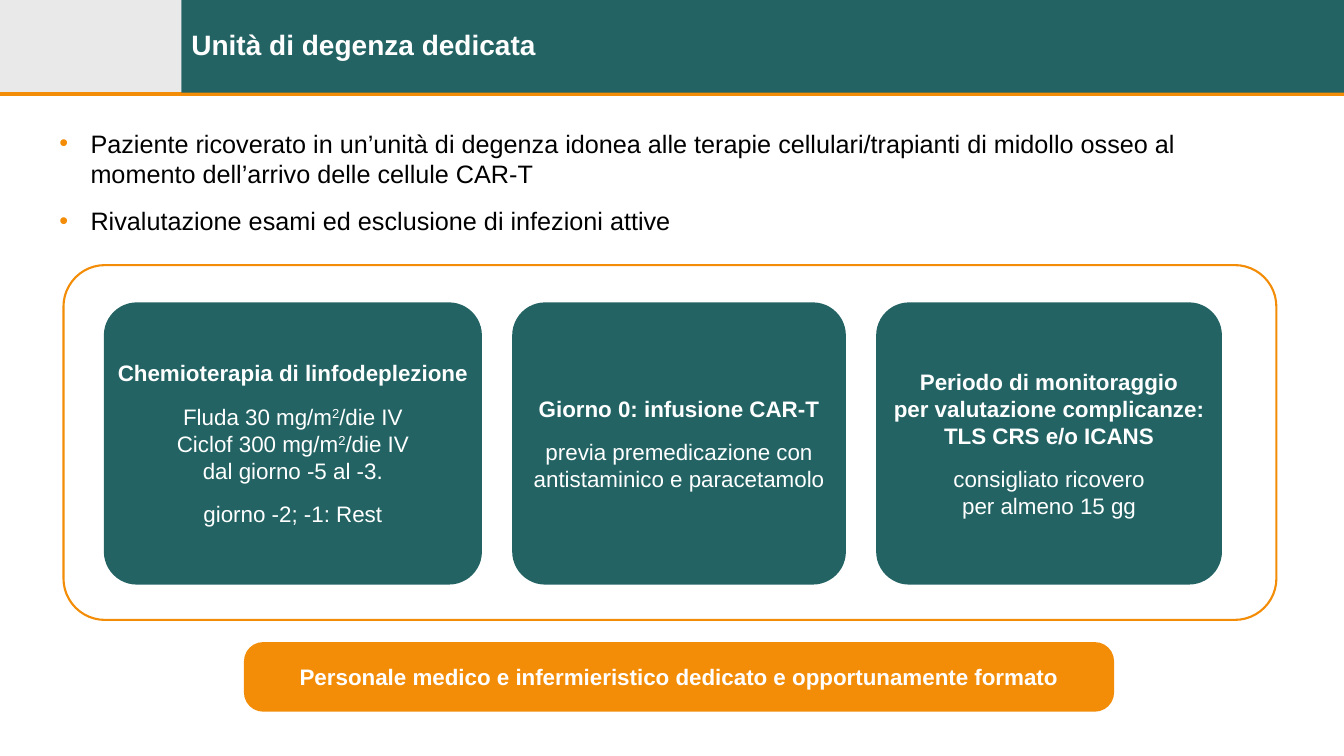
from dataclasses import dataclass
from lxml import etree
from pptx import Presentation
from pptx.dml.color import RGBColor
from pptx.enum.shapes import MSO_CONNECTOR, MSO_SHAPE
from pptx.enum.text import MSO_ANCHOR, PP_ALIGN
from pptx.oxml.ns import qn
from pptx.util import Inches, Pt

RECT, ROUND = MSO_SHAPE.RECTANGLE, MSO_SHAPE.ROUNDED_RECTANGLE
STRAIGHT = MSO_CONNECTOR.STRAIGHT
MIDDLE, TOP = MSO_ANCHOR.MIDDLE, MSO_ANCHOR.TOP
CENTER, LEFT = PP_ALIGN.CENTER, PP_ALIGN.LEFT


@dataclass(frozen=True)
class Theme:
    font: str = "Arial"
    teal: str = "236364"
    orange: str = "F38D08"
    gray: str = "E9E9E9"
    white: str = "FFFFFF"
    black: str = "000000"
    title: int = 20
    body: int = 18
    card: int = 16
    gap: int = 12


THEME = Theme()
WIDTH, HEIGHT = 13.33, 7.5

POINTS = [
    "Paziente ricoverato in un’unità di degenza idonea alle terapie "
    "cellulari/trapianti di midollo osseo al momento dell’arrivo delle cellule CAR-T",
    "Rivalutazione esami ed esclusione di infezioni attive",
]
# Card width, heading, then blocks of lines; ^ raises the next character.
CARDS = [
    (3.75, "Chemioterapia di linfodeplezione",
     [["Fluda 30 mg/m^2/die IV", "Ciclof 300 mg/m^2/die IV", "dal giorno -5 al -3."],
      ["giorno -2; -1: Rest"]]),
    (3.31, "Giorno 0: infusione CAR-T",
     [["previa premedicazione con antistaminico e paracetamolo"]]),
    (3.43, "Periodo di monitoraggio\vper valutazione complicanze: TLS CRS e/o ICANS",
     [["consigliato ricovero\vper almeno 15 gg"]]),
]


def color(code):
    return RGBColor.from_string(code)


def block(slide, box, kind, fill=None, line=None, radius=None):
    shape = slide.shapes.add_shape(kind, *map(Inches, box))
    shape.shadow.inherit = False
    if radius is not None:
        shape.adjustments[0] = radius
    if fill:
        shape.fill.solid()
        shape.fill.fore_color.rgb = color(fill)
    else:
        shape.fill.background()
    if line:
        shape.line.color.rgb = color(line)
        shape.line.width = Pt(1.5)
    else:
        shape.line.fill.background()
    return shape


def frame(shape, anchor, side=0.1):
    text = shape.text_frame
    text.word_wrap = True
    text.vertical_anchor = anchor
    text.margin_left = text.margin_right = Inches(side)
    text.margin_top = text.margin_bottom = Inches(0.05)
    return text


def write(para, words, size, ink, bold=False, align=LEFT, before=0):
    head, *tail = words.split("^")
    para.text = head
    for part in tail:
        power = para.add_run()
        power.text = part[0]
        power.font._element.set("baseline", "30000")
        para.add_run().text = part[1:]
    para.alignment = align
    para.space_before = Pt(before)
    for run in para.runs:
        font = run.font
        font.name, font.size, font.bold = THEME.font, Pt(size), bold
        font.color.rgb = color(ink)


def bullet(para):
    props = para._p.get_or_add_pPr()
    props.set("marL", str(Inches(0.31)))
    props.set("indent", str(-Inches(0.31)))
    tint = etree.SubElement(props, qn("a:buClr"))
    etree.SubElement(tint, qn("a:srgbClr"), val=THEME.orange)
    etree.SubElement(props, qn("a:buFont"), typeface=THEME.font)
    etree.SubElement(props, qn("a:buChar"), char="•")


def header(slide, box, title):
    left, top, width, height = box
    side = 1.8
    block(slide, (left, top, side, height), RECT, THEME.gray)
    rule = slide.shapes.add_connector(
        STRAIGHT, *map(Inches, (left, top + height + 0.01, left + width, top + height + 0.01)))
    rule.line.color.rgb = color(THEME.orange)
    rule.line.width = Pt(3)
    etree.SubElement(rule._element.spPr, qn("a:effectLst"))
    band = block(slide, (left + side, top, width - side, height), RECT, THEME.teal)
    para = frame(band, MIDDLE).paragraphs[0]
    write(para, title, THEME.title, THEME.white, bold=True)
    para.line_spacing = 0.9


def points(slide, box, items):
    text = frame(slide.shapes.add_textbox(*map(Inches, box)), TOP)
    for i, item in enumerate(items):
        para = text.add_paragraph() if i else text.paragraphs[0]
        bullet(para)
        write(para, item, THEME.body, THEME.black, before=THEME.gap if i else 0)


def card(slide, box, head, groups):
    text = frame(block(slide, box, ROUND, THEME.teal, radius=0.117), MIDDLE, side=0)
    write(text.paragraphs[0], head, THEME.card, THEME.white, True, CENTER)
    for group in groups:
        for i, line in enumerate(group):
            write(text.add_paragraph(), line, THEME.card, THEME.white,
                  align=CENTER, before=0 if i else THEME.gap)


def panel(slide, box, cards):
    left, top, width, height = box
    x, y, gap = left + 0.4, top + 0.37, 0.3
    for wide, head, groups in cards:
        card(slide, (x, y, wide, 2.8), head, groups)
        x += wide + gap
    block(slide, box, ROUND, line=THEME.orange, radius=0.117)


def banner(slide, box, words):
    text = frame(block(slide, box, ROUND, THEME.orange, radius=0.276), MIDDLE, side=0)
    write(text.paragraphs[0], words, THEME.card, THEME.white, True, CENTER)


def main():
    deck = Presentation()
    deck.slide_width, deck.slide_height = Inches(WIDTH), Inches(HEIGHT)
    slide = deck.slides.add_slide(deck.slide_layouts[6])
    header(slide, (0, 0, WIDTH, 0.92), "Unità di degenza dedicata")
    points(slide, (0.49, 1.22, 12.17, 1.18), POINTS)
    panel(slide, (0.63, 2.63, 12.03, 3.52), CARDS)
    banner(slide, (2.42, 6.37, 8.63, 0.69),
           "Personale medico e infermieristico dedicato e opportunamente formato")
    deck.save("out.pptx")


if __name__ == "__main__":
    main()
